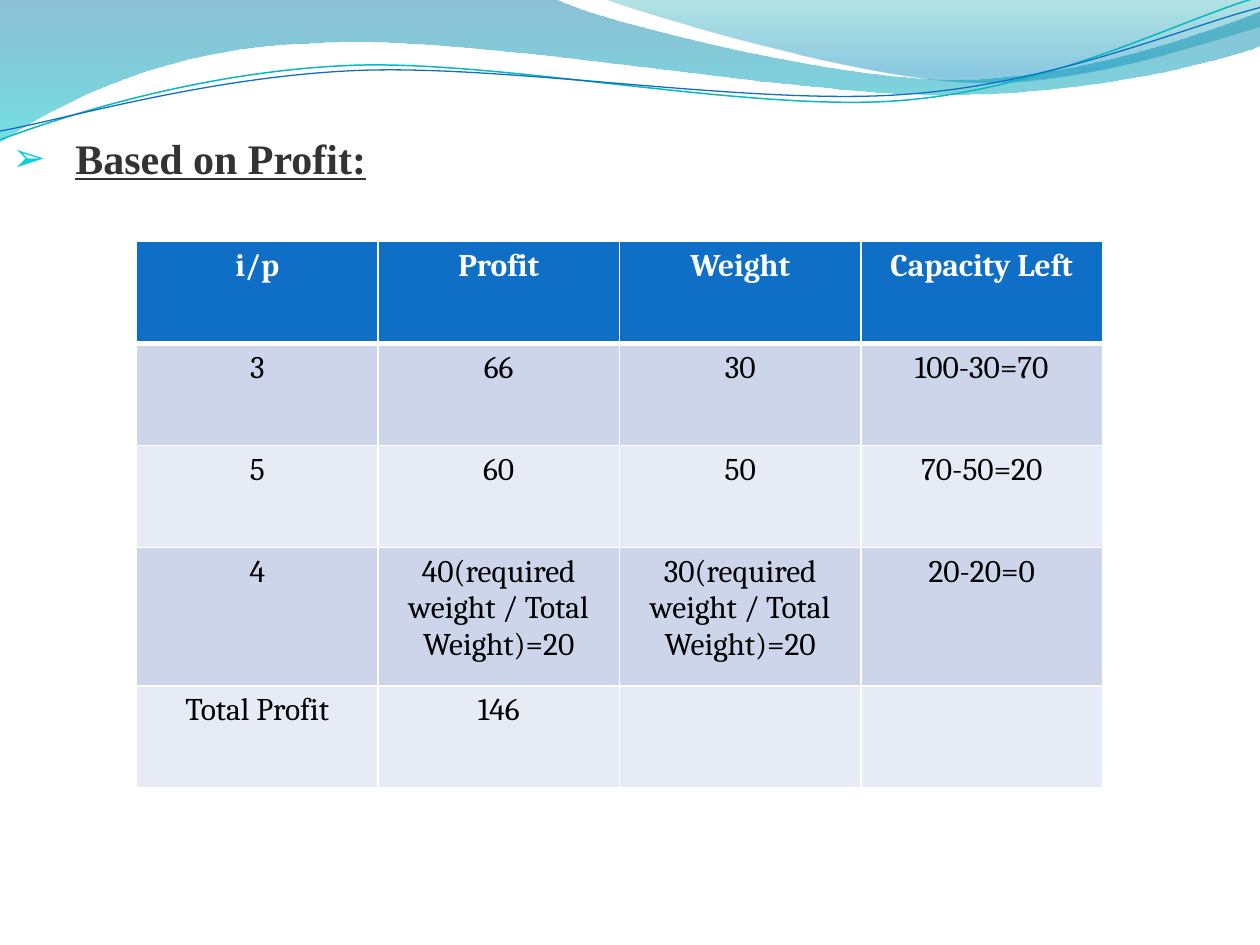
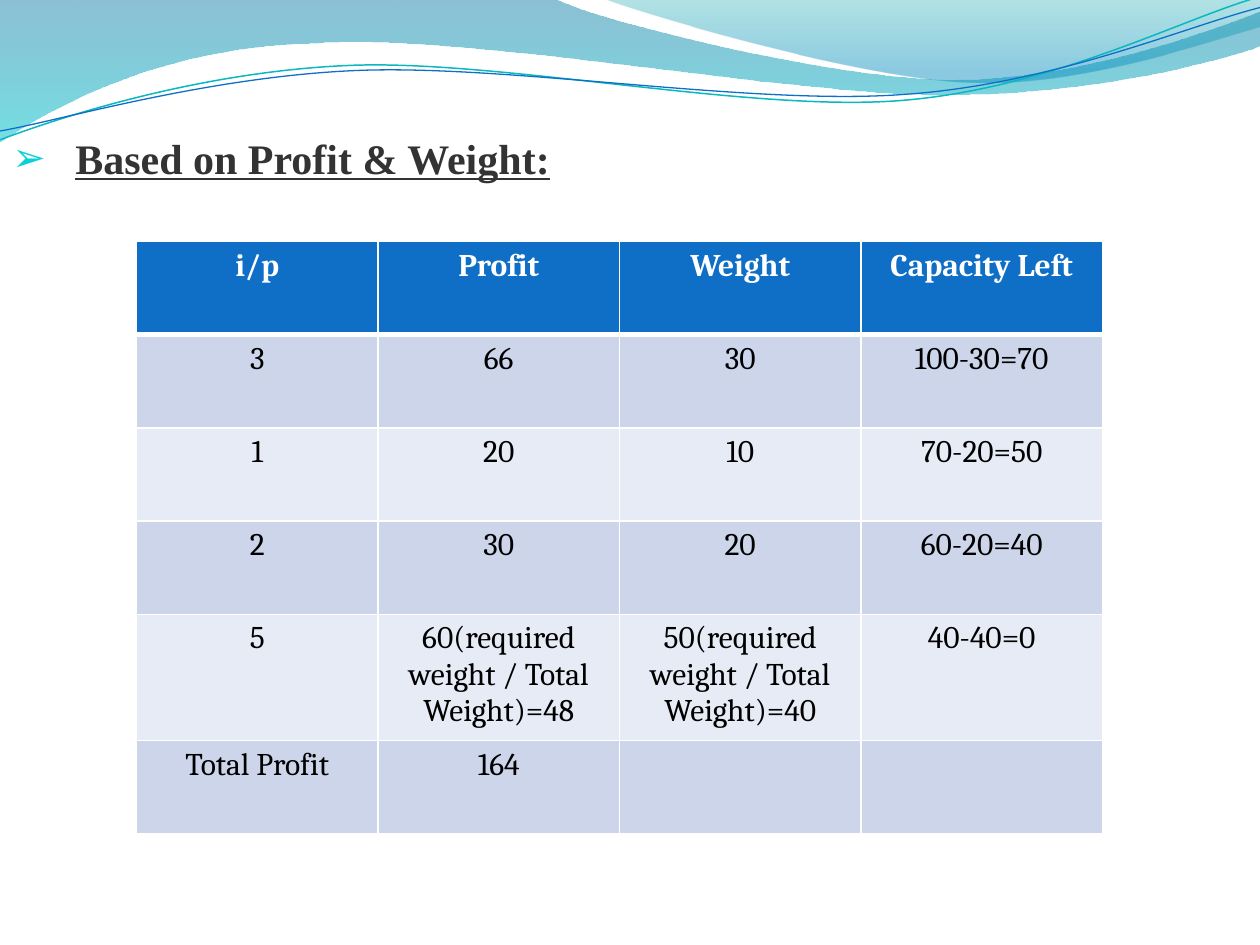
from lxml import etree
from pptx import Presentation
from pptx.dml.color import RGBColor
from pptx.enum.text import PP_ALIGN
from pptx.oxml.ns import qn
from pptx.util import Inches, Pt

CENTER, JUSTIFY = PP_ALIGN.CENTER, PP_ALIGN.JUSTIFY

COLORS = {
    "heading": "333333", "bullet": "0BD0D9",
    "header": "0F6FC6", "header_text": "FFFFFF", "body_text": "000000",
    "odd_row": "CCD5EA", "even_row": "E7EBF5", "grid": "FFFFFF",
    "band_top": "0074A1", "band_bottom": "00C6CF",
    "crest_top": "00A1A9", "crest_bottom": "008BBF",
    "teal_line": "0AB8BF", "blue_line": "0F6FC6",
}
HEADING_FONT, TABLE_FONT, BULLET_FONT = "Times New Roman", "Cambria", "Arial"
HEADER = ("i/p", "Profit", "Weight", "Capacity Left")

SLIDES = [
    {
        "heading": "Based on Profit:",
        "row_heights": (0.81, 0.81, 0.81, 1.1, 0.81),
        "rows": [
            ("3", "66", "30", "100-30=70"),
            ("5", "60", "50", "70-50=20"),
            ("4", "40(required weight / Total Weight)=20",
             "30(required weight / Total Weight)=20", "20-20=0"),
            ("Total Profit", "146", "", ""),
        ],
    },
    {
        "heading": "Based on Profit & Weight:",
        "row_heights": (0.74,) * 6,
        "rows": [
            ("3", "66", "30", "100-30=70"),
            ("1", "20", "10", "70-20=50"),
            ("2", "30", "20", "60-20=40"),
            ("5", "60(required weight / Total Weight)=48",
             "50(required weight / Total Weight)=40", "40-40=0"),
            ("Total Profit", "164", "", ""),
        ],
    },
]

WAVE_FILLS = [
    {
        "start": (0, 0),
        "steps": [
            [(4.4, -0.01)],
            [(4.76, 0.17), (6.64, 0.63), (7.58, 0.63)],
            [(8.53, 0.63), (9.58, 0.26), (10, 0.09)],
            [(10.01, 0.36)],
            [(9.83, 0.44), (8.7, 0.76), (7.46, 0.75)],
            [(6.22, 0.75), (3.82, 0.28), (2.57, 0.34)],
            [(1.29, 0.36), (0.46, 0.83), (-0.01, 1.13)],
        ],
        "stops": [(0, "band_top", 45), (1, "band_bottom", 55)],
    },
    {
        "start": (4.79, -0.01),
        "steps": [
            [(5.09, 0.11), (6.82, 0.62), (7.69, 0.65)],
            [(8.56, 0.69), (9.61, 0.32), (10, 0.21)],
            [(10, 0)],
        ],
        "stops": [(0, "crest_top", 30), (0.8, "crest_bottom", 45)],
    },
]
WAVE_LINES = [
    {
        "start": (0, 1.11),
        "steps": [
            [(0.48, 0.93), (1.58, 0.57), (2.77, 0.52)],
            [(3.95, 0.47), (5.93, 0.89), (7.13, 0.8)],
            [(8.33, 0.71), (9.38, 0.15), (9.98, -0.02)],
        ],
        "color": "teal_line", "width": 0.85,
    },
    {
        "start": (0, 1.04),
        "steps": [
            [(0.47, 0.96), (1.64, 0.61), (2.83, 0.56)],
            [(4.03, 0.51), (5.97, 0.84), (7.17, 0.75)],
            [(8.36, 0.67), (9.41, 0.21), (10, 0.06)],
        ],
        "color": "blue_line", "width": 0.75,
    },
]
TABLE_LEFT, TABLE_TOP, COLUMN_WIDTH = 13 / 12, 23 / 12, 23 / 12
GRID_WIDTH, HEADER_RULE_WIDTH = 1, 3


def rgb(name):
    return RGBColor.from_string(COLORS[name])


def add_wave(slide, wave, closed):
    points = [(Inches(x), Inches(y)) for step in wave["steps"] for x, y in step]
    builder = slide.shapes.build_freeform(*(Inches(v) for v in wave["start"]))
    builder.add_line_segments(points, close=closed)
    shape = builder.convert_to_shape()
    shape.shadow.inherit = False
    segments = iter(list(shape._element.iter(qn("a:lnTo"))))
    for step in wave["steps"]:
        edges = [next(segments) for _ in step]
        if len(edges) == 3:
            curve = etree.Element(qn("a:cubicBezTo"))
            edges[0].addprevious(curve)
            for edge in edges:
                curve.append(edge[0])
                edge.getparent().remove(edge)
    return shape


def add_waves(slide):
    for wave in WAVE_FILLS:
        band = add_wave(slide, wave, True)
        band.line.fill.background()
        band.fill.gradient()
        band.fill.gradient_angle = 270
        for stop, (position, color, _) in zip(band.fill.gradient_stops, wave["stops"]):
            stop.position = position
            stop.color.rgb = rgb(color)
        color_nodes = band._element.spPr.iter(qn("a:srgbClr"))
        for node, (_, _, opacity) in zip(color_nodes, wave["stops"]):
            etree.SubElement(node, qn("a:alpha"), val=str(opacity * 1000))
    for wave in WAVE_LINES:
        ripple = add_wave(slide, wave, False)
        ripple.fill.background()
        ripple.line.color.rgb = rgb(wave["color"])
        ripple.line.width = Pt(wave["width"])


def add_run(paragraph, text, font, size, color, bold):
    run = paragraph.add_run()
    run.text = text
    run.font.name = font
    run.font.size = Pt(size)
    run.font.bold = bold
    run.font.color.rgb = rgb(color)
    return run


def add_heading(slide, text):
    box = slide.shapes.add_textbox(0, 0, Inches(10), Inches(7.5))
    box.text_frame.word_wrap = True
    box.text_frame.margin_top = Inches(1.05)
    paragraph = box.text_frame.paragraphs[0]
    paragraph.alignment = JUSTIFY
    props = paragraph._p.get_or_add_pPr()
    props.set("marL", str(Inches(0.5)))
    props.set("indent", str(-Inches(0.5)))
    bullet_color = etree.SubElement(props, qn("a:buClr"))
    etree.SubElement(bullet_color, qn("a:srgbClr"), val=COLORS["bullet"])
    etree.SubElement(props, qn("a:buSzPct"), val="95000")
    etree.SubElement(props, qn("a:buFont"), typeface=BULLET_FONT)
    etree.SubElement(props, qn("a:buChar"), char="➢")
    add_run(paragraph, text, HEADING_FONT, 24, "heading", True).font.underline = True


def set_borders(cell, top, bottom):
    widths = {"L": GRID_WIDTH, "R": GRID_WIDTH, "T": top, "B": bottom}
    props = cell._tc.get_or_add_tcPr()
    for index, (side, width) in enumerate(widths.items()):
        border = etree.Element(qn(f"a:ln{side}"), w=str(Pt(width)))
        fill = etree.SubElement(border, qn("a:solidFill"))
        etree.SubElement(fill, qn("a:srgbClr"), val=COLORS["grid"])
        props.insert(index, border)


def add_profit_table(slide, rows, heights):
    content = [HEADER, *rows]
    table = slide.shapes.add_table(
        len(content), len(HEADER), Inches(TABLE_LEFT), Inches(TABLE_TOP),
        Inches(COLUMN_WIDTH * len(HEADER)), Inches(sum(heights))).table
    for r, (values, height) in enumerate(zip(content, heights)):
        table.rows[r].height = Inches(height)
        is_header = r == 0
        row_fill = "header" if is_header else "odd_row" if r % 2 else "even_row"
        text_color = "header_text" if is_header else "body_text"
        for c, value in enumerate(values):
            cell = table.cell(r, c)
            cell.fill.solid()
            cell.fill.fore_color.rgb = rgb(row_fill)
            set_borders(cell, HEADER_RULE_WIDTH if r == 1 else GRID_WIDTH,
                        HEADER_RULE_WIDTH if is_header else GRID_WIDTH)
            paragraph = cell.text_frame.paragraphs[0]
            paragraph.alignment = CENTER
            if value:
                add_run(paragraph, value, TABLE_FONT, 18, text_color, is_header)


def main():
    deck = Presentation()
    deck.slide_width, deck.slide_height = Inches(10), Inches(7.5)
    for content in SLIDES:
        slide = deck.slides.add_slide(deck.slide_layouts[6])
        add_waves(slide)
        add_heading(slide, content["heading"])
        add_profit_table(slide, content["rows"], content["row_heights"])
    deck.save("out.pptx")


if __name__ == "__main__":
    main()
